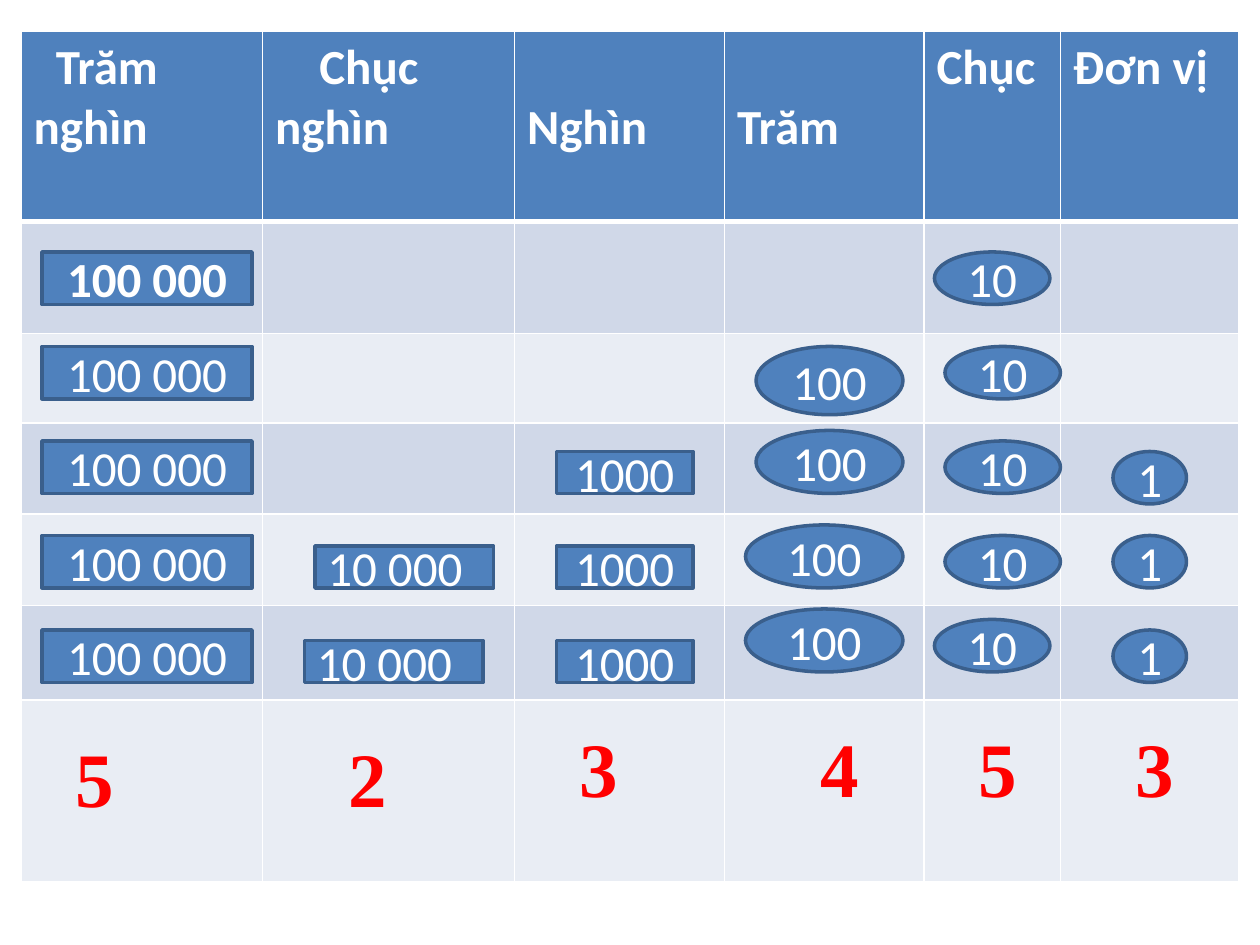
"""Build a place-value table for the number 523 453 with counters and digits."""

from dataclasses import dataclass

import lxml.etree
import pptx
import pptx.dml.color
import pptx.enum.shapes
import pptx.enum.text
import pptx.oxml.ns
import pptx.util

Pt = pptx.util.Pt
RGBColor = pptx.dml.color.RGBColor
Shape = pptx.enum.shapes.MSO_SHAPE
Align = pptx.enum.text.PP_ALIGN

WHITE = RGBColor(0xFF, 0xFF, 0xFF)
BLUE = RGBColor(0x4F, 0x81, 0xBD)
DARK_BLUE = RGBColor(0x3A, 0x5F, 0x8C)
BAND_DARK = RGBColor(0xD0, 0xD8, 0xE8)
BAND_LIGHT = RGBColor(0xE9, 0xED, 0xF4)
RED = RGBColor(0xFF, 0x00, 0x00)

LINE_HEIGHT = 34.2
ROW_HEIGHTS = (108.7, 64, 51, 52, 52.5, 54, 103.7)


@dataclass(frozen=True)
class Column:
    title: str
    width: float
    indent: float = 0
    lines_down: int = 0


@dataclass(frozen=True)
class CounterKind:
    label: str
    shape: Shape
    width: float
    height: float
    places: tuple[tuple[float, float], ...]
    align: Align = Align.CENTER


@dataclass(frozen=True)
class Digit:
    text: str
    left: float
    top: float = 408


COLUMNS = (
    Column("Trăm nghìn", 138, indent=12.7),
    Column("Chục nghìn", 144, indent=25.3),
    Column("Nghìn", 120, lines_down=1),
    Column("Trăm", 114, lines_down=1),
    Column("Chục", 78),
    Column("Đơn vị", 102),
)

COUNTERS = (
    CounterKind("100 000", Shape.RECTANGLE, 120, 30,
                tuple((24, 144 + 54 * step) for step in range(5))),
    CounterKind("10 000", Shape.RECTANGLE, 102, 24, ((180, 312), (174, 366)), Align.LEFT),
    CounterKind("1000", Shape.RECTANGLE, 78, 24,
                tuple((318, 258 + 54 * step) for step in range(3))),
    CounterKind("100", Shape.OVAL, 84, 39, ((432, 198),)),
    CounterKind("100", Shape.OVAL, 84, 36, ((432, 246),)),
    CounterKind("100", Shape.OVAL, 90, 36, ((426, 300), (426, 348))),
    CounterKind("10", Shape.OVAL, 66, 30,
                ((534, 144), (540, 198), (540, 252), (540, 306), (534, 354))),
    CounterKind("1", Shape.OVAL, 42, 30, ((636, 258), (636, 306), (636, 360))),
)

DIGITS = (
    Digit("5", 36, 414),
    Digit("2", 192, 414),
    Digit("3", 324),
    Digit("4", 462),
    Digit("5", 552),
    Digit("3", 642),
)


def add_span(para, text: str, size: float, color: RGBColor,
             font: str = "Calibri", bold: bool = False) -> None:
    """Add one formatted run to a paragraph."""
    span = para.add_run()
    span.text = text
    span.font.name = font
    span.font.size = Pt(size)
    span.font.bold = bold
    span.font.color.rgb = color


def set_borders(cell, bottom_width: float, top_width: float) -> None:
    """Give a cell white borders, placed before its fill."""
    properties = cell._tc.get_or_add_tcPr()
    widths = {"lnL": 1, "lnR": 1, "lnT": top_width, "lnB": bottom_width}
    for position, (side, width) in enumerate(widths.items()):
        line = lxml.etree.Element(pptx.oxml.ns.qn(f"a:{side}"), w=str(int(Pt(width))))
        fill = lxml.etree.SubElement(line, pptx.oxml.ns.qn("a:solidFill"))
        lxml.etree.SubElement(fill, pptx.oxml.ns.qn("a:srgbClr"), val=str(WHITE))
        properties.insert(position, line)


def add_header(cell, column: Column) -> None:
    """Write a column title into its header cell."""
    cell.margin_top = Pt(3.6 + LINE_HEIGHT * column.lines_down)
    para = cell.text_frame.paragraphs[0]
    if column.indent:
        para._p.get_or_add_pPr().set("indent", str(int(Pt(column.indent))))
    add_span(para, column.title, 28, WHITE, bold=True)


def add_place_table(page) -> None:
    """Draw the table with its header and banded rows."""
    total_width = sum(column.width for column in COLUMNS)
    table = page.shapes.add_table(
        len(ROW_HEIGHTS), len(COLUMNS), Pt(12), Pt(18),
        Pt(total_width), Pt(sum(ROW_HEIGHTS))).table
    for index, column in enumerate(COLUMNS):
        table.columns[index].width = Pt(column.width)
        add_header(table.cell(0, index), column)
    for row, height in enumerate(ROW_HEIGHTS):
        table.rows[row].height = Pt(height)
        band = BLUE if row == 0 else BAND_DARK if row % 2 else BAND_LIGHT
        for cell in table.rows[row].cells:
            cell.fill.solid()
            cell.fill.fore_color.rgb = band
            set_borders(cell, 3 if row == 0 else 1, 3 if row == 1 else 1)


def add_counters(page, kind: CounterKind) -> None:
    """Draw every counter of one kind."""
    for left, top in kind.places:
        box = page.shapes.add_shape(kind.shape, Pt(left), Pt(top),
                                    Pt(kind.width), Pt(kind.height))
        box.shadow.inherit = False
        box.fill.solid()
        box.fill.fore_color.rgb = BLUE
        box.line.color.rgb = DARK_BLUE
        box.line.width = Pt(2)
        box.text_frame.word_wrap = True
        box.text_frame.vertical_anchor = pptx.enum.text.MSO_ANCHOR.MIDDLE
        para = box.text_frame.paragraphs[0]
        para.alignment = kind.align
        is_first = (left, top) == (24, 144)
        add_span(para, kind.label, 28, WHITE, bold=is_first)


def add_digit(page, digit: Digit) -> None:
    """Write one digit of the number below its column."""
    box = page.shapes.add_textbox(Pt(digit.left), Pt(digit.top), Pt(84), Pt(60.5))
    box.text_frame.word_wrap = True
    box.text_frame.auto_size = pptx.enum.text.MSO_AUTO_SIZE.SHAPE_TO_FIT_TEXT
    add_span(box.text_frame.paragraphs[0], digit.text, 44, RED, "Times New Roman", True)


def main() -> None:
    """Build and save the deck."""
    deck = pptx.Presentation()
    deck.slide_width, deck.slide_height = Pt(720), Pt(540)
    page = deck.slides.add_slide(deck.slide_layouts[6])
    add_place_table(page)
    for kind in COUNTERS:
        add_counters(page, kind)
    for digit in DIGITS:
        add_digit(page, digit)
    deck.save("out.pptx")


if __name__ == "__main__":
    main()
